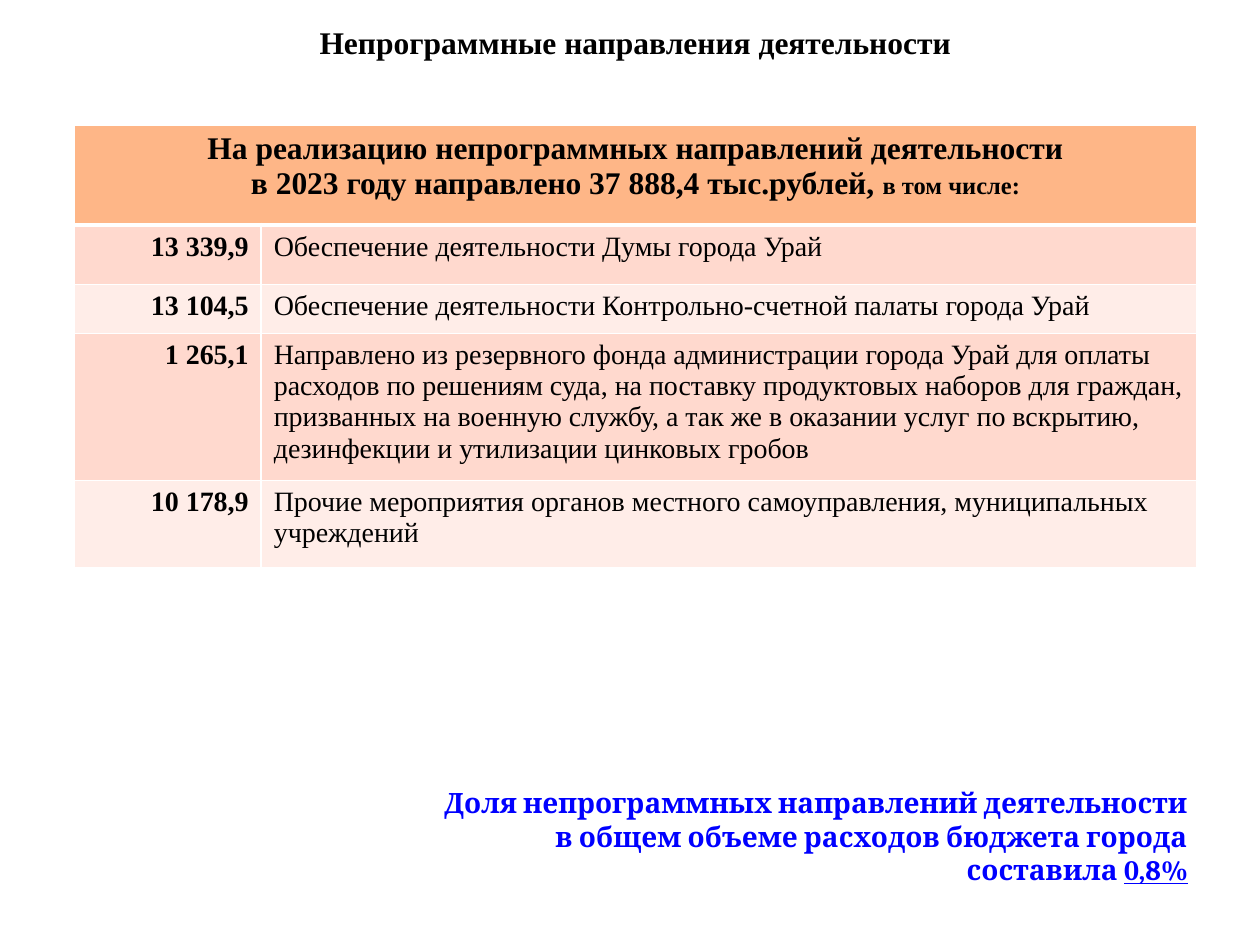
from lxml import etree
from pptx import Presentation
from pptx.dml.color import RGBColor
from pptx.enum import text
from pptx.oxml import ns
from pptx.util import Pt

BLACK = RGBColor(0, 0, 0)
BLUE = RGBColor(0, 0, 255)
ORANGE = RGBColor(0xFE, 0xB6, 0x87)
BANDS = [RGBColor(0xFF, 0xD9, 0xCE), RGBColor(0xFF, 0xED, 0xE8)]
BORDER = "FFFFFF"
LEFT, CENTER, RIGHT = text.PP_ALIGN.LEFT, text.PP_ALIGN.CENTER, text.PP_ALIGN.RIGHT


def write(paragraph, words, size, align, bold=True, font="Times New Roman", color=BLACK):
    paragraph.alignment = align
    run = paragraph.add_run()
    run.text = words
    run.font.name, run.font.size, run.font.bold = font, Pt(size), bold
    run.font.color.rgb = color
    return run


def paint(cell, fill, bottom=1):
    cell.fill.solid()
    cell.fill.fore_color.rgb = fill
    # Border lines come before the fill in the cell properties
    props = cell._tc.get_or_add_tcPr()
    for place, (side, width) in enumerate(zip("LRTB", (1, 1, 1, bottom))):
        line = etree.Element(ns.qn(f"a:ln{side}"), w=str(Pt(width)))
        solid = etree.SubElement(line, ns.qn("a:solidFill"))
        etree.SubElement(solid, ns.qn("a:srgbClr"), val=BORDER)
        props.insert(place, line)


deck = Presentation()
deck.slide_width, deck.slide_height = Pt(720), Pt(540)
slide = deck.slides.add_slide(deck.slide_layouts[6])

# Title
title = slide.shapes.add_textbox(Pt(20), Pt(9.5), Pt(686), Pt(29)).text_frame
title.word_wrap = True
write(title.paragraphs[0], "Непрограммные направления деятельности", 18, CENTER)

# Spending table
expenses = [
    ("13 339,9", "Обеспечение деятельности Думы города Урай"),
    ("13 104,5", "Обеспечение деятельности Контрольно-счетной палаты города Урай"),
    ("1 265,1", "Направлено из резервного фонда администрации города Урай для оплаты "
     "расходов по решениям суда, на поставку продуктовых наборов для граждан, "
     "призванных на военную службу, а так же в оказании услуг по вскрытию, "
     "дезинфекции и утилизации цинковых гробов"),
    ("10 178,9", "Прочие мероприятия органов местного самоуправления, "
     "муниципальных учреждений"),
]
heights = [57, 34, 28, 84, 50]
spending = slide.shapes.add_table(
    len(heights), 2, Pt(42.7), Pt(71.6), Pt(641), Pt(sum(heights))).table
for column, width in zip(spending.columns, (106.6, 534.4)):
    column.width = Pt(width)
for row, height in zip(spending.rows, heights):
    row.height = Pt(height)

# Table heading across both columns
heading = spending.cell(0, 0)
heading.merge(spending.cell(0, 1))
for cell in spending.rows[0].cells:
    paint(cell, ORANGE, bottom=3)
write(heading.text_frame.paragraphs[0],
      "На реализацию непрограммных направлений деятельности", 18, CENTER)
total = heading.text_frame.add_paragraph()
write(total, "в 2023 году направлено 37 888,4 тыс.рублей, ", 18, CENTER)
write(total, "в том числе:", 14, CENTER)

# Amounts and purposes
for index, (amount, purpose) in enumerate(expenses):
    amount_cell, purpose_cell = spending.rows[index + 1].cells
    write(amount_cell.text_frame.paragraphs[0], amount, 16, RIGHT)
    write(purpose_cell.text_frame.paragraphs[0], purpose, 16, LEFT, bold=False)
    for cell in (amount_cell, purpose_cell):
        paint(cell, BANDS[index % 2])

# Share of the city budget
share = slide.shapes.add_textbox(Pt(241), Pt(445.5), Pt(445), Pt(65.5)).text_frame
share.word_wrap = True
conclusion = share.paragraphs[0]
write(conclusion, "Доля непрограммных направлений деятельности в общем объеме "
      "расходов бюджета города составила ", 16, RIGHT, font="Cambria", color=BLUE)
percent = write(conclusion, "0,8%", 16, RIGHT, font="Cambria", color=BLUE)
percent.font.underline = True

deck.save("out.pptx")
